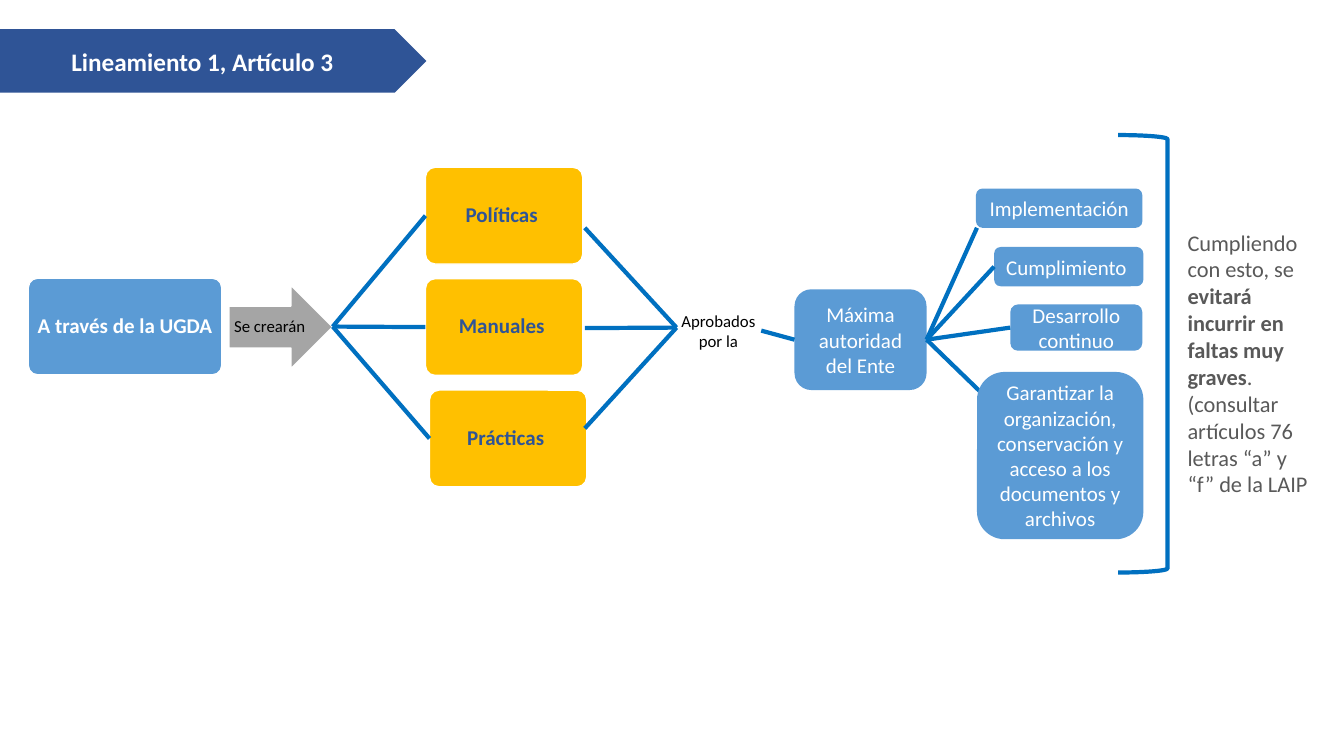
"""Build the slide on Lineamiento 1, Artículo 3."""
from dataclasses import dataclass

from lxml.etree import SubElement
from pptx import Presentation
from pptx.dml.color import RGBColor
from pptx.enum.shapes import MSO_CONNECTOR, MSO_SHAPE
from pptx.enum.text import MSO_ANCHOR, MSO_AUTO_SIZE, PP_ALIGN
from pptx.oxml.ns import qn
from pptx.shapes.autoshape import Shape
from pptx.shapes.connector import Connector
from pptx.slide import Slide
from pptx.util import Inches, Pt

WHITE = RGBColor(0xFF, 0xFF, 0xFF)
BLACK = RGBColor(0, 0, 0)
NAVY = RGBColor(0x2F, 0x54, 0x96)
BLUE = RGBColor(0x5B, 0x9B, 0xD5)
LINE_BLUE = RGBColor(0x00, 0x70, 0xC0)
AMBER = RGBColor(0xFF, 0xC0, 0x00)
GRAY = RGBColor(0xA5, 0xA5, 0xA5)
DARK_GRAY = RGBColor(0x59, 0x59, 0x59)

TOP, LEFT, RIGHT = 0, 1, 3
Point = tuple[float, float]
Run = tuple[str, bool]


@dataclass
class Box:
    text: str
    left: float
    top: float
    width: float
    height: float
    fill: RGBColor = BLUE
    color: RGBColor = WHITE
    size: float = 15
    bold: bool = False
    kind: MSO_SHAPE = MSO_SHAPE.ROUNDED_RECTANGLE
    adj: float = 0.167
    outlined: bool = False
    spacing: float = 1.0
    insets: tuple[float, float, float, float] = (0.1, 0.05, 0.1, 0.05)


@dataclass
class Note:
    paragraphs: list[list[Run]]
    left: float
    top: float
    width: float
    height: float
    size: float
    color: RGBColor
    align: PP_ALIGN


def write(sp: Shape, paragraphs: list[list[Run]], size: float, color: RGBColor,
          align: PP_ALIGN, spacing: float = 1.0) -> None:
    """Fill a shape with paragraphs of runs."""
    tf = sp.text_frame
    tf.word_wrap = True
    for i, runs in enumerate(paragraphs):
        p = tf.add_paragraph() if i else tf.paragraphs[0]
        p.alignment = align
        p.line_spacing = spacing
        for text, bold in runs:
            r = p.add_run()
            r.text = text
            r.font.name = "Calibri"
            r.font.size = Pt(size)
            r.font.bold = bold
            r.font.color.rgb = color


def add_box(s: Slide, box: Box) -> Shape:
    """Draw a filled shape with its label."""
    sp = s.shapes.add_shape(box.kind, Inches(box.left), Inches(box.top),
                            Inches(box.width), Inches(box.height))
    sp.shadow.inherit = False
    if box.kind != MSO_SHAPE.RIGHT_ARROW:
        sp.adjustments[0] = box.adj
    sp.fill.solid()
    sp.fill.fore_color.rgb = box.fill
    if box.outlined:
        sp.line.color.rgb = WHITE
        sp.line.width = Pt(1)
    else:
        sp.line.fill.background()
    tf = sp.text_frame
    tf.vertical_anchor = MSO_ANCHOR.MIDDLE
    tf.margin_left, tf.margin_top, tf.margin_right, tf.margin_bottom = map(Inches, box.insets)
    write(sp, [[(box.text, box.bold)]], box.size, box.color, PP_ALIGN.CENTER, box.spacing)
    return sp


def add_note(s: Slide, note: Note) -> None:
    """Draw a text box."""
    sp = s.shapes.add_textbox(Inches(note.left), Inches(note.top),
                              Inches(note.width), Inches(note.height))
    write(sp, note.paragraphs, note.size, note.color, note.align)
    sp.text_frame.auto_size = MSO_AUTO_SIZE.SHAPE_TO_FIT_TEXT


def add_link(s: Slide, start: Point, end: Point) -> Connector:
    """Draw a straight blue connector."""
    link = s.shapes.add_connector(MSO_CONNECTOR.STRAIGHT, *map(Inches, start + end))
    link.line.color.rgb = LINE_BLUE
    link.line.width = Pt(3)
    SubElement(link._element.spPr, qn("a:effectLst"))
    return link


def step(text: str, left: float, top: float, width: float, fill: RGBColor,
         color: RGBColor) -> Box:
    """Describe a bold outlined box of the first stages."""
    return Box(text, left, top, width, 0.96, fill, color, bold=True, adj=0.1,
               outlined=True, spacing=0.9, insets=(0.04,) * 4)


def add_bracket(s: Slide) -> None:
    """Draw the bracket that closes the outcomes."""
    sp = s.shapes.add_shape(MSO_SHAPE.RIGHT_BRACKET, Inches(11.09), Inches(1.34),
                            Inches(0.49), Inches(4.34))
    sp.shadow.inherit = False
    sp.adjustments[0] = 0.083
    sp.fill.background()
    sp.line.color.rgb = LINE_BLUE
    sp.line.width = Pt(3)


ARROW_TIP = (3.3, 3.24)
APPROVAL = (6.71, 3.25)
AUTHORITY_LEFT = (7.88, 3.37)
AUTHORITY_RIGHT = (9.19, 3.37)

TITLE = Box("Lineamiento 1, Artículo 3 ", 0, 0.29, 4.23, 0.63, NAVY, size=18,
            bold=True, kind=MSO_SHAPE.PENTAGON, adj=0.5)
UNIT = step("A través de la UGDA", 0.28, 2.76, 1.92, BLUE, WHITE)
ARROW = Box("Se crearán", 2.27, 2.83, 1.03, 0.83, GRAY, BLACK, 12,
            kind=MSO_SHAPE.RIGHT_ARROW, outlined=True, spacing=0.9,
            insets=(0.01, 0, 0.02, 0))
INSTRUMENTS = [("Políticas ", 4.22), ("Manuales ", 4.22), ("Prácticas ", 4.26)]
AUTHORITY = Box("Máxima autoridad del Ente", 7.88, 2.87, 1.31, 1)
LOOSE_ENDS = [(9.69, 2.26), (10.17, 4.32)]
CORNER_OUTCOMES = [
    Box("Implementación", 9.68, 1.87, 1.65, 0.39),
    Box("Garantizar la organización, conservación y acceso a los documentos y archivos",
        9.69, 3.69, 1.65, 1.66),
]
SIDE_OUTCOMES = [
    Box("Cumplimiento ", 9.86, 2.45, 1.48, 0.39),
    Box("Desarrollo continuo", 10.02, 3.02, 1.31, 0.46),
]
NOTES = [
    Note([[("Aprobados por la", False)]], 6.64, 3.03, 0.97, 0.51, 12, BLACK, PP_ALIGN.CENTER),
    Note([[("Cumpliendo con esto, se ", False),
           ("evitará incurrir en faltas muy graves", True), (".", False)],
          [("(consultar artículos 76 letras “a” y “f” de la LAIP", False)]],
         11.68, 2.22, 1.39, 2.79, 16, DARK_GRAY, PP_ALIGN.LEFT),
]


def main() -> None:
    """Draw the slide and save it."""
    prs = Presentation()
    prs.slide_width, prs.slide_height = Inches(13.33), Inches(7.5)
    s = prs.slides.add_slide(prs.slide_layouts[6])

    for box in (TITLE, UNIT, ARROW):
        add_box(s, box)
    for i, (text, left) in enumerate(INSTRUMENTS):
        top = 1.66 + 1.105 * i
        sp = add_box(s, step(text, left, top, 1.56, AMBER, NAVY))
        add_link(s, ARROW_TIP, (left, top + 0.48)).end_connect(sp, LEFT)
        add_link(s, (5.8, 2.26 + 0.995 * i), APPROVAL)

    authority = add_box(s, AUTHORITY)
    add_link(s, (7.55, 3.28), AUTHORITY_LEFT).end_connect(authority, LEFT)
    for end in LOOSE_ENDS:
        add_link(s, AUTHORITY_RIGHT, end).begin_connect(authority, RIGHT)
    for box in CORNER_OUTCOMES:
        add_box(s, box)
    for box in SIDE_OUTCOMES:
        sp = add_box(s, box)
        link = add_link(s, AUTHORITY_RIGHT, (box.left, box.top + box.height / 2))
        link.begin_connect(authority, RIGHT)
        link.end_connect(sp, LEFT)

    add_bracket(s)
    for note in NOTES:
        add_note(s, note)
    prs.save("out.pptx")


if __name__ == "__main__":
    main()
